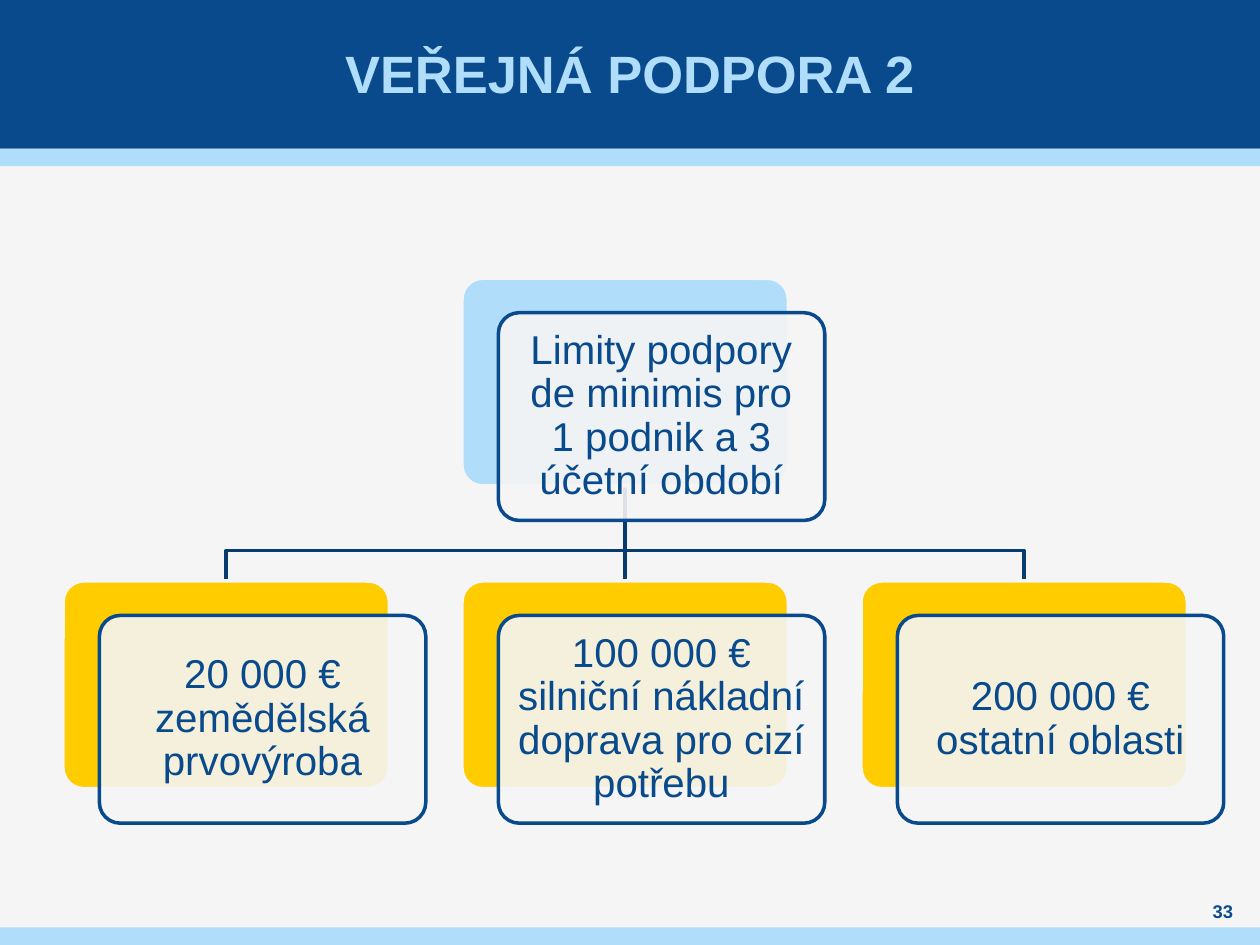
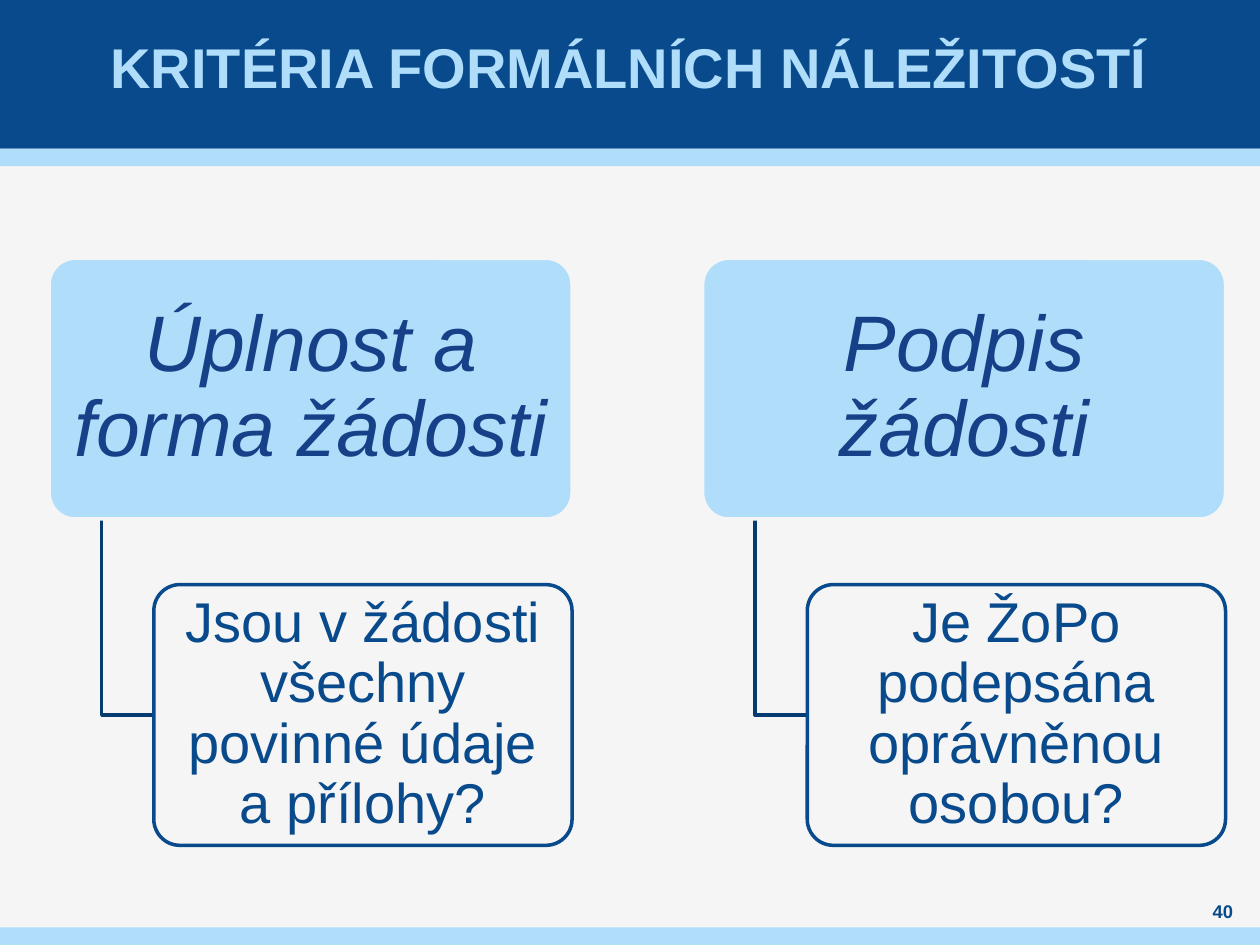
"""Builds two slides on public support limits and formal application criteria."""
import pptx
import pptx.util
import pptx.dml.color
import pptx.enum.shapes
import pptx.enum.text
import pptx.oxml.ns
import lxml.etree

Pt = pptx.util.Pt
RGBColor = pptx.dml.color.RGBColor
Shape = pptx.enum.shapes.MSO_SHAPE
MIDDLE = pptx.enum.text.MSO_ANCHOR.MIDDLE
CENTER = pptx.enum.text.PP_ALIGN.CENTER
qn = pptx.oxml.ns.qn

NAVY = RGBColor(0x08, 0x4A, 0x8B)
DARK_NAVY = RGBColor(0x06, 0x3B, 0x6F)
INDIGO = RGBColor(0x16, 0x40, 0x88)
SKY = RGBColor(0xAF, 0xDD, 0xFA)
YELLOW = RGBColor(0xFF, 0xCC, 0x00)
PAPER = RGBColor(0xF5, 0xF5, 0xF5)


def write(box, text, size, color, margins, bold=False, italic=False, spacing=1.0):
    frame = box.text_frame
    frame.text = text
    frame.word_wrap = True
    frame.auto_size = pptx.enum.text.MSO_AUTO_SIZE.NONE
    frame.vertical_anchor = MIDDLE
    frame.margin_left = frame.margin_right = Pt(margins[0])
    frame.margin_top = frame.margin_bottom = Pt(margins[1])
    para = frame.paragraphs[0]
    para.alignment = CENTER
    para.line_spacing = spacing
    font = para.runs[0].font
    font.name, font.size, font.color.rgb = "Arial", Pt(size), color
    font.bold, font.italic = bold, italic


def add_card(page, left, top, width, height, fill, line, opacity=100):
    card = page.shapes.add_shape(Shape.ROUNDED_RECTANGLE, Pt(left), Pt(top), Pt(width), Pt(height))
    card.adjustments[0] = 0.1
    card.shadow.inherit = False
    card.fill.solid()
    card.fill.fore_color.rgb = fill
    card.line.color.rgb = line
    card.line.width = Pt(2)
    if opacity < 100:
        color = card.fill._xPr.find(qn("a:solidFill"))[0]
        lxml.etree.SubElement(color, qn("a:alpha")).set("val", str(opacity * 1000))
    return card


deck = pptx.Presentation()
deck.slide_width, deck.slide_height = Pt(720), Pt(540)
deck.slide_master.background.fill.solid()
deck.slide_master.background.fill.fore_color.rgb = PAPER
layout = deck.slide_layouts[5]

headings = [
    ("VEŘEJNÁ PODPORA 2", 30, (0, 0, 720, 83), "33"),
    ("KRITÉRIA FORMÁLNÍCH NÁLEŽITOSTÍ", 32, (28, -5, 663, 85), "40"),
]
pages = []
for heading, size, place, number in headings:
    page = deck.slides.add_slide(layout)
    title = page.shapes.title
    title.left, title.top, title.width, title.height = [Pt(length) for length in place]
    write(title, heading, size, SKY, (3, 0), bold=True)
    number_box = page.shapes.add_textbox(Pt(680.4), Pt(513.4), Pt(36.7), Pt(14.4))
    write(number_box, number, 10.5, NAVY, (0, 0), bold=True)
    pages.append(page)
limits_page, criteria_page = pages

bands = [(0, 85, NAVY), (85, 10, SKY), (530, 10, SKY)]
for index, (top, height, color) in enumerate(bands):
    band = limits_page.shapes.add_shape(Shape.RECTANGLE, 0, Pt(top), Pt(720), Pt(height))
    band.shadow.inherit = False
    band.fill.solid()
    band.fill.fore_color.rgb = color
    band.line.fill.background()
    band._element.nvSpPr.cNvPr.set("id", str(20 + index))
    layout.shapes._spTree.insert(2 + index, band._element)

card_width, card_height = 186.5, 118.7
column_lefts = [36 + 228 * column for column in range(3)]
root_top, limit_top, bend = 159, 332, 314.6
root_bottom = root_top + card_height
root_middle = column_lefts[1] + card_width / 2
routes = []
for left in (column_lefts[0], column_lefts[2]):
    middle = left + card_width / 2
    routes.append((limits_page, [(root_middle, root_bottom), (root_middle, bend),
                                 (middle, bend), (middle, limit_top)]))

head_width, box_height, head_top, detail_top = 298.8, 149, 147.6, 334.1
criteria_lefts = [28.1, 401.5]
for left in criteria_lefts:
    elbow = detail_top + box_height / 2
    routes.append((criteria_page, [(left + 30, head_top + box_height), (left + 30, elbow),
                                   (left + 59.8, elbow)]))

for page, points in routes:
    corners = [(Pt(x), Pt(y)) for x, y in points]
    builder = page.shapes.build_freeform(*corners[0])
    builder.add_line_segments(corners[1:], close=False)
    route = builder.convert_to_shape()
    route.shadow.inherit = False
    route.fill.background()
    route.line.color.rgb = DARK_NAVY
    route.line.width = Pt(2)

limits = [
    (column_lefts[1], root_top, SKY, "Limity podpory de minimis pro 1 podnik a 3 účetní období"),
    (column_lefts[0], limit_top, YELLOW, "20 000 € zemědělská prvovýroba"),
    (column_lefts[1], limit_top, YELLOW, "100 000 € silniční nákladní doprava pro cizí potřebu"),
    (column_lefts[2], limit_top, YELLOW, "200 000 € ostatní oblasti"),
]
backs = []
for left, top, color, text in limits:
    backs.append(add_card(limits_page, left, top, card_width, card_height, color, PAPER))
    front = add_card(limits_page, left + 20.8, top + 19.7, card_width, card_height, PAPER, NAVY, 90)
    write(front, text, 23, NAVY, (7.2, 7.2), spacing=0.9)

stem = limits_page.shapes.add_connector(pptx.enum.shapes.MSO_CONNECTOR.STRAIGHT, 0, 0, 0, 0)
stem.begin_connect(backs[0], 2)
stem.end_connect(backs[2], 0)
stem.line.color.rgb = DARK_NAVY
stem.line.width = Pt(2)
lxml.etree.SubElement(stem._element.spPr, qn("a:effectLst"))
limits_page.shapes._spTree.insert(2, stem._element)

criteria = [
    ("Úplnost a forma žádosti", "Jsou v žádosti všechny povinné údaje a přílohy?"),
    ("Podpis žádosti", "Je ŽoPo podepsána oprávněnou osobou?"),
]
for left, (criterion, question) in zip(criteria_lefts, criteria):
    head = add_card(criteria_page, left, head_top, head_width, box_height, SKY, PAPER)
    write(head, criterion, 45, INDIGO, (6.3, 4.3), italic=True, spacing=0.9)
    detail = add_card(criteria_page, left + 59.8, detail_top, 239, box_height, PAPER, NAVY, 90)
    write(detail, question, 32, NAVY, (4.8, 3), spacing=0.9)

deck.save("out.pptx")
